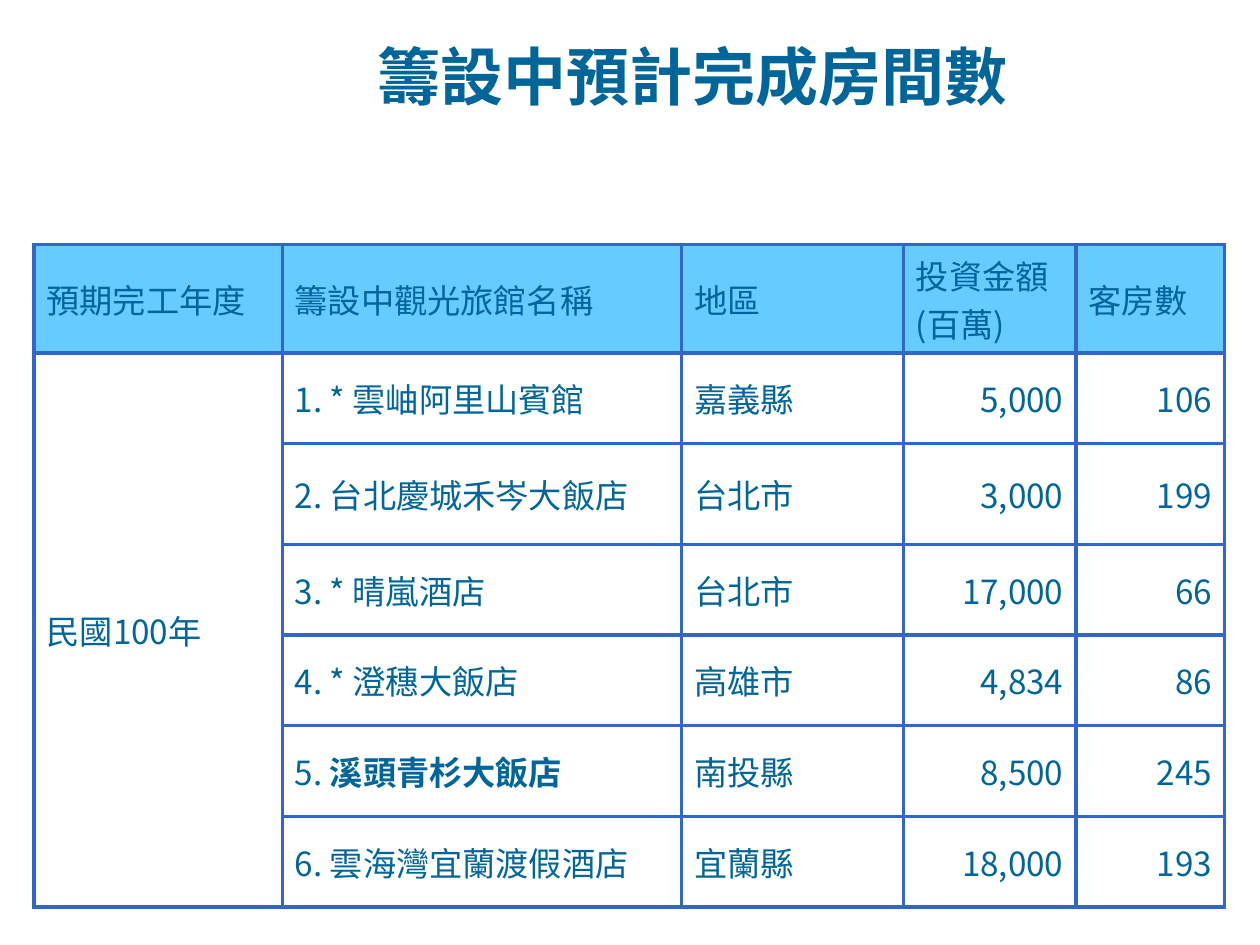
from lxml import etree
from pptx import Presentation
from pptx import util as u
from pptx.dml.color import RGBColor
from pptx.enum import text
from pptx.oxml import ns

HEADERS = ["預期完工年度", "籌設中觀光旅館名稱", "地區", "投資金額(百萬)", "客房數"]
YEAR = "民國100年"
# Prefix, hotel name, bold name, region, investment, rooms
HOTELS = [
    ("1. * ", "雲岫阿里山賓館", False, "嘉義縣", "5,000", "106"),
    ("2. ", "台北慶城禾岑大飯店", False, "台北市", "3,000", "199"),
    ("3. * ", "晴嵐酒店", False, "台北市", "17,000", "66"),
    ("4. * ", "澄穗大飯店", False, "高雄市", "4,834", "86"),
    ("5. ", "溪頭青杉大飯店", True, "南投縣", "8,500", "245"),
    ("6. ", "雲海灣宜蘭渡假酒店", False, "宜蘭縣", "18,000", "193"),
]
COLUMN_WIDTHS = [1.97, 3.17, 1.76, 1.37, 1.18]
ROW_HEIGHTS = [0.86, 0.72, 0.8, 0.72, 0.72, 0.72, 0.72]


def color(value):
    return RGBColor.from_string(value)


class SlideBuilder:
    ink, line, header_fill, body_fill = "006699", "3366CC", "66CCFF", "FFFFFF"
    line_width = 2.25
    title_format = {"name": "Times New Roman", "size": u.Pt(36)}
    cell_format = {"name": "Noto Sans CJK JP", "size": u.Pt(19)}

    def __init__(self, slide):
        self.slide = slide

    def add_runs(self, frame, runs, align, style):
        """Fill the first paragraph with (wording, bold) runs."""
        paragraph = frame.paragraphs[0]
        paragraph.alignment = align
        for wording, bold in runs:
            run = paragraph.add_run()
            run.text = wording
            for name, value in {**style, "bold": bold}.items():
                setattr(run.font, name, value)
            run.font.color.rgb = color(self.ink)

    def title(self, wording, left, top, width, height):
        box = self.slide.shapes.add_textbox(*map(u.Inches, (left, top, width, height)))
        frame = box.text_frame
        frame.word_wrap = True
        frame.vertical_anchor = text.MSO_ANCHOR.MIDDLE
        self.add_runs(frame, [(wording, True)], text.PP_ALIGN.CENTER, self.title_format)

    def table(self, left, top, widths, heights):
        frame = self.slide.shapes.add_table(
            len(heights), len(widths), u.Inches(left), u.Inches(top),
            u.Inches(sum(widths)), u.Inches(sum(heights)))
        table = frame.table
        for column, width in zip(table.columns, widths):
            column.width = u.Inches(width)
        for index, (row, height) in enumerate(zip(table.rows, heights)):
            row.height = u.Inches(height)
            for cell in row.cells:
                self.style_cell(cell, self.body_fill if index else self.header_fill)
        return table

    def style_cell(self, cell, fill):
        cell.vertical_anchor = text.MSO_ANCHOR.MIDDLE
        properties = cell._tc.get_or_add_tcPr()
        for side in ("a:lnL", "a:lnR", "a:lnT", "a:lnB"):
            border = etree.SubElement(properties, ns.qn(side), w=str(u.Pt(self.line_width)))
            solid = etree.SubElement(border, ns.qn("a:solidFill"))
            etree.SubElement(solid, ns.qn("a:srgbClr"), val=self.line)
        cell.fill.solid()
        cell.fill.fore_color.rgb = color(fill)

    def cell(self, cell, *runs, align=text.PP_ALIGN.LEFT):
        self.add_runs(cell.text_frame, runs, align, self.cell_format)


def main():
    presentation = Presentation()
    presentation.slide_width, presentation.slide_height = u.Inches(10), u.Inches(7.5)
    builder = SlideBuilder(presentation.slides.add_slide(presentation.slide_layouts[6]))

    # Title
    builder.title("籌設中預計完成房間數", 1.25, 0.28, 8.5, 0.63)

    # Table with header row and year spanning all hotels
    table = builder.table(0.27, 1.94, COLUMN_WIDTHS, ROW_HEIGHTS)
    for column, header in enumerate(HEADERS):
        builder.cell(table.cell(0, column), (header, False))
    table.cell(1, 0).merge(table.cell(len(HOTELS), 0))
    builder.cell(table.cell(1, 0), (YEAR, False))

    # Hotel rows
    for row, (prefix, name, bold, region, *numbers) in enumerate(HOTELS, start=1):
        builder.cell(table.cell(row, 1), (prefix, False), (name, bold))
        builder.cell(table.cell(row, 2), (region, False))
        for column, number in enumerate(numbers, start=3):
            builder.cell(table.cell(row, column), (number, False), align=text.PP_ALIGN.RIGHT)

    presentation.save("out.pptx")


if __name__ == "__main__":
    main()
